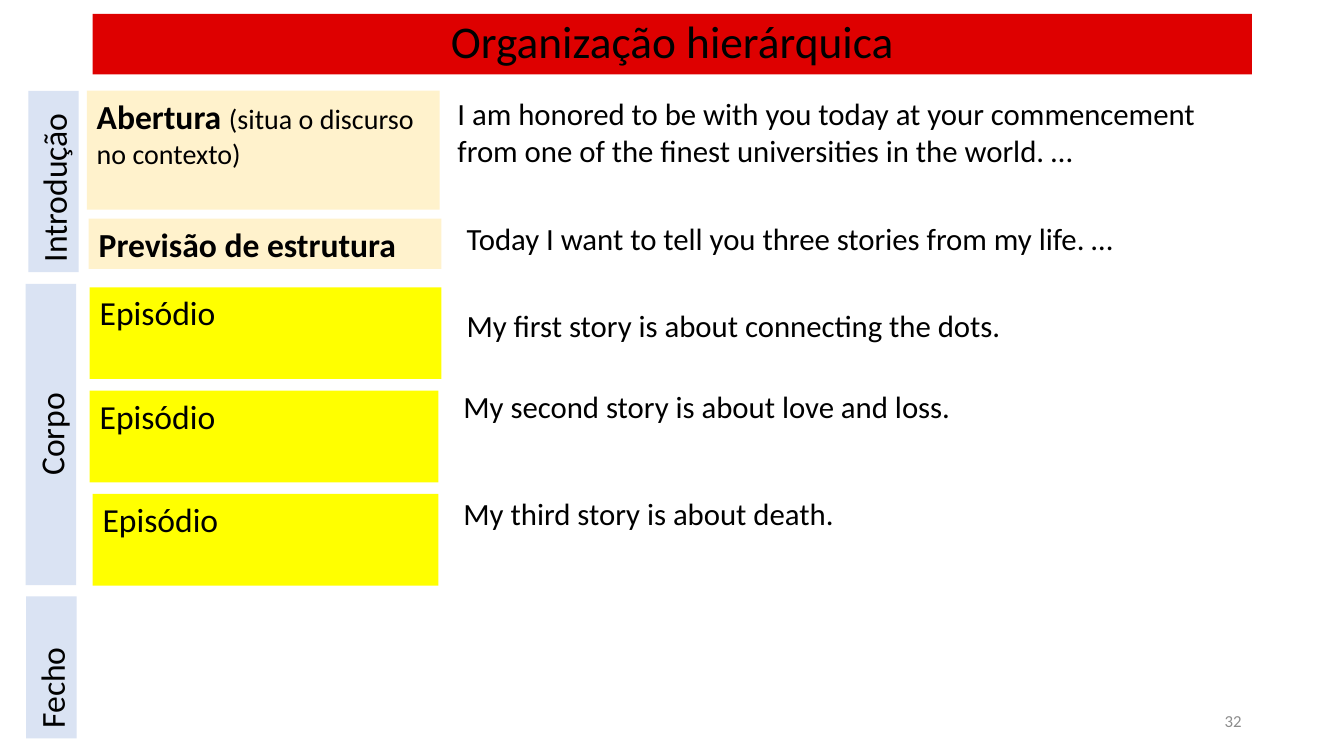
from dataclasses import dataclass

from pptx import Presentation
from pptx.dml.color import RGBColor
from pptx.enum.shapes import MSO_SHAPE
from pptx.enum.text import MSO_ANCHOR, PP_ALIGN
from pptx.util import Pt

RECTANGLE = MSO_SHAPE.RECTANGLE
TOP, MIDDLE = MSO_ANCHOR.TOP, MSO_ANCHOR.MIDDLE
LEFT, CENTER, RIGHT = PP_ALIGN.LEFT, PP_ALIGN.CENTER, PP_ALIGN.RIGHT


@dataclass(frozen=True)
class Theme:
    font: str = "Calibri"
    ink: str = "000000"
    muted: str = "8C8C8C"
    banner: str = "DE0000"
    section: str = "DAE3F3"
    opening: str = "FFF2CC"
    episode: str = "FFFF00"
    title_size: float = 32.4
    label_size: float = 24
    quote_size: float = 22
    note_size: float = 20
    number_size: float = 12


THEME = Theme()
TAB_WIDTH = 36
QUOTE_WIDTH = 568


@dataclass(frozen=True)
class Move:
    """One step of the speech; boxes are offsets from its section."""
    label: str
    box: tuple
    quote: str
    quote_box: tuple
    fill: str
    bold: bool = False
    note: str = ""


def style(run, size, color=THEME.ink, bold=False):
    run.font.name = THEME.font
    run.font.size = Pt(size)
    run.font.bold = bold
    run.font.color.rgb = RGBColor.from_string(color)


def write(shape, text, size, color=THEME.ink, bold=False, align=LEFT, anchor=TOP):
    frame = shape.text_frame
    frame.word_wrap = True
    frame.vertical_anchor = anchor
    frame.text = text
    paragraph = frame.paragraphs[0]
    paragraph.alignment = align
    style(paragraph.runs[0], size, color, bold)
    return paragraph


def add_panel(slide, box, fill):
    panel = slide.shapes.add_shape(RECTANGLE, *map(Pt, box))
    panel.shadow.inherit = False
    panel.fill.solid()
    panel.fill.fore_color.rgb = RGBColor.from_string(fill)
    panel.line.fill.background()
    return panel


def add_title(slide, box, text):
    banner = add_panel(slide, box, THEME.banner)
    heading = write(banner, text, THEME.title_size, align=CENTER, anchor=MIDDLE)
    heading.line_spacing = 0.9


def add_section_tab(slide, box, label, align):
    """Fill the upright box with a label that reads upwards."""
    left, top, width, height = box
    shift = (height - width) / 2
    tab = add_panel(slide, (left - shift, top + shift, height, width), THEME.section)
    tab.rotation = 270
    write(tab, label, THEME.label_size, align=align)


def add_move(slide, origin, move):
    def place(box):
        return origin[0] + box[0], origin[1] + box[1], box[2], box[3]

    panel = add_panel(slide, place(move.box), move.fill)
    heading = write(panel, move.label, THEME.label_size, bold=move.bold)
    if move.note:
        note = heading.add_run()
        note.text = move.note
        style(note, THEME.note_size)
    quote = slide.shapes.add_textbox(*map(Pt, place(move.quote_box)))
    write(quote, move.quote, THEME.quote_size)


def add_section(slide, box, label, moves=(), align=LEFT):
    add_section_tab(slide, box, label, align)
    for move in moves:
        add_move(slide, box[:2], move)


def add_page_number(slide, box, number):
    field = slide.shapes.add_textbox(*map(Pt, box))
    write(field, number, THEME.number_size, THEME.muted, align=RIGHT, anchor=MIDDLE)


INTRODUCTION = [
    Move("Abertura ", (41.8, 0, 252, 85),
         "I am honored to be with you today at your commencement from one of "
         "the finest universities in the world. …",
         (299.5, -0.7, QUOTE_WIDTH, 60.5), THEME.opening, True,
         "(situa o discurso no contexto)"),
    Move("Previsão de estrutura", (43.2, 91.4, 252, 36),
         "Today I want to tell you three stories from my life. …",
         (306, 88.6, QUOTE_WIDTH, 33.8), THEME.opening, True),
]

# Episodes: story, panel left and width, quote left and top
STORIES = [
    ("My first story is about connecting the dots.", 45.7, 251.3, 307.8, 12.6),
    ("My second story is about love and loss.", 45.7, 249.1, 305.6, 70.9),
    ("My third story is about death.", 47.8, 247, 305.6, 147.2),
]
EPISODE_PITCH = 73.8
BODY = [
    Move("Episódio", (left, 2.5 + row * EPISODE_PITCH, width, 65.5),
         story, (quote_left, quote_top, QUOTE_WIDTH, 33.8), THEME.episode)
    for row, (story, left, width, quote_left, quote_top) in enumerate(STORIES)
]


def main():
    deck = Presentation()
    deck.slide_width, deck.slide_height = Pt(960), Pt(540)
    slide = deck.slides.add_slide(deck.slide_layouts[6])

    add_title(slide, (66.2, 10, 828, 43.2), "Organização hierárquica")
    add_section(slide, (20.2, 64.8, TAB_WIDTH, 129.6), "Introdução", INTRODUCTION)
    add_section(slide, (18.4, 202.7, TAB_WIDTH, 215.3), "Corpo", BODY, CENTER)
    add_section(slide, (18.7, 426, TAB_WIDTH, 101.5), "Fecho")
    add_page_number(slide, (678, 500.4, 216, 28.8), "32")

    deck.save("out.pptx")


if __name__ == "__main__":
    main()
